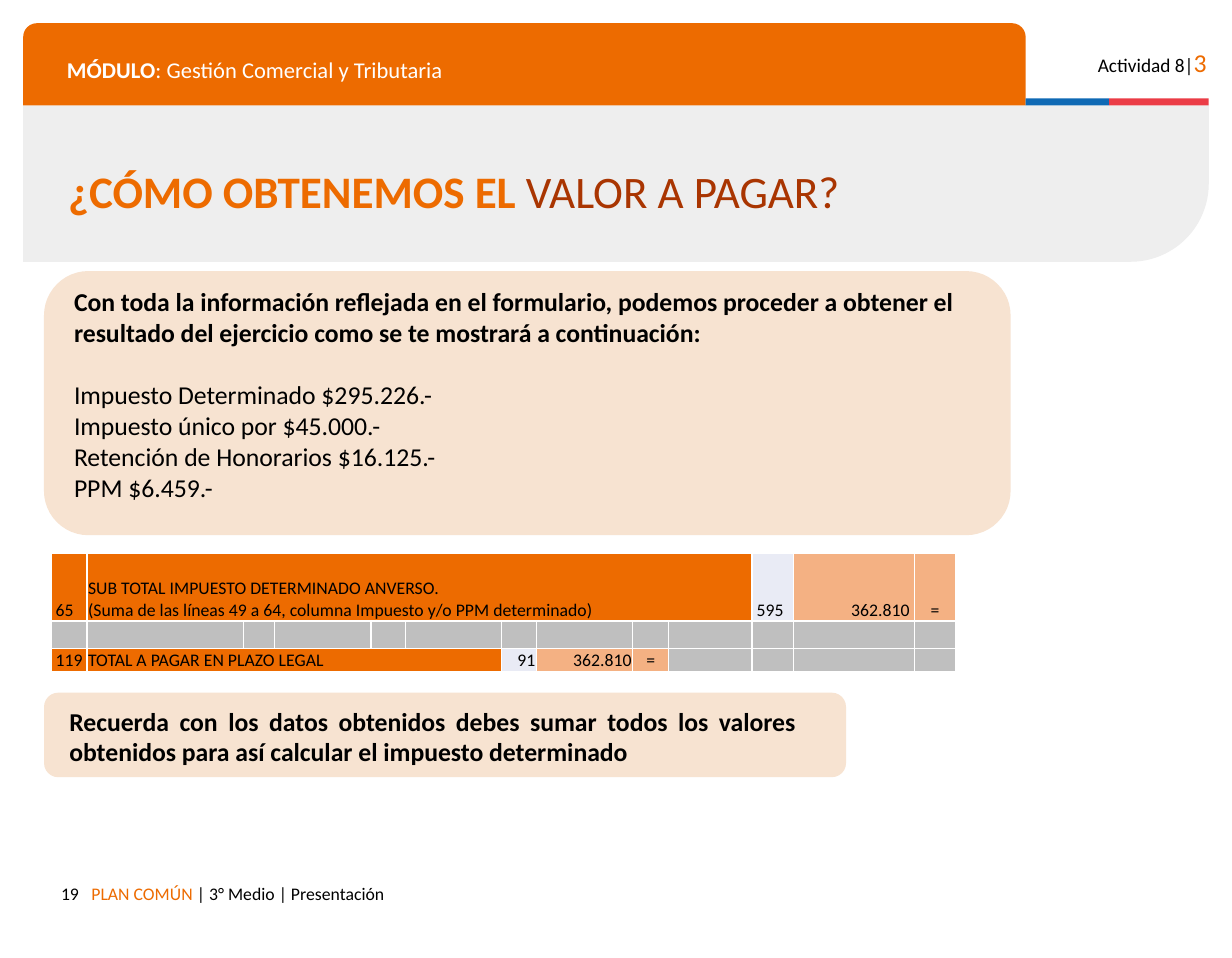
from dataclasses import dataclass

import lxml.etree
import pptx
import pptx.dml.color
import pptx.enum.shapes
import pptx.enum.text
import pptx.oxml.ns
import pptx.util

Inches = pptx.util.Inches
Pt = pptx.util.Pt
Shape = pptx.enum.shapes.MSO_SHAPE
Align = pptx.enum.text.PP_ALIGN
Anchor = pptx.enum.text.MSO_ANCHOR
qn = pptx.oxml.ns.qn


@dataclass(frozen=True)
class Theme:
    font: str = "Calibri"
    orange: str = "ED6B00"
    rust: str = "A93501"
    peach: str = "F7E3D1"
    salmon: str = "F4B183"
    lilac: str = "E9EBF5"
    pale: str = "EEEEEE"
    gray: str = "BFBFBF"
    blue: str = "0F69B4"
    red: str = "EB3C46"
    white: str = "FFFFFF"
    black: str = "000000"
    title: int = 28
    body: int = 16
    module: int = 14
    label: int = 12
    small: int = 11


THEME = Theme()


def rgb(color):
    return pptx.dml.color.RGBColor.from_string(color)


def add_span(para, text, size=THEME.body, color=THEME.black, bold=False):
    span = para.add_run()
    span.text = text
    span.font.name = THEME.font
    span.font.size = Pt(size)
    span.font.bold = bold
    span.font.color.rgb = rgb(color)


class SlideBuilder:
    def __init__(self, deck, theme):
        self.theme = theme
        self.page = deck.slides.add_slide(deck.slide_layouts[6])

    def shape(self, kind, at, color, adjustments=()):
        box = self.page.shapes.add_shape(kind, *map(Inches, at))
        box.shadow.inherit = False
        box.fill.solid()
        box.fill.fore_color.rgb = rgb(color)
        box.line.fill.background()
        for index, value in enumerate(adjustments):
            box.adjustments[index] = value
        return box

    def text(self, at, lines, align=Align.LEFT, anchor=Anchor.TOP, inset=0.1, spacing=None):
        frame = self.page.shapes.add_textbox(*map(Inches, at)).text_frame
        frame.word_wrap = True
        frame.vertical_anchor = anchor
        frame.margin_left = frame.margin_right = Inches(0.1)
        frame.margin_top = frame.margin_bottom = Inches(inset)
        for index, spans in enumerate(lines):
            para = frame.add_paragraph() if index else frame.paragraphs[0]
            para.alignment = align
            para.line_spacing = spacing
            for text, style in spans:
                add_span(para, text, **style)
        return frame

    def table(self, at, widths, heights):
        grid = self.page.shapes.add_table(len(heights), len(widths), *map(Inches, at)).table
        for column, width in zip(grid.columns, widths):
            column.width = Inches(width)
        for row, height in zip(grid.rows, heights):
            row.height = Inches(height)
        for row in range(len(heights)):
            for column in range(len(widths)):
                self.cell(grid, row, column, self.theme.gray)
        return grid

    def cell(self, grid, row, column, color, lines=(), align=Align.LEFT, left=0.01, right=0.01, span=1):
        cell = grid.cell(row, column)
        if span > 1:
            cell.merge(grid.cell(row, column + span - 1))
        cell.fill.solid()
        cell.fill.fore_color.rgb = rgb(color)
        cell.vertical_anchor = Anchor.BOTTOM
        cell.margin_left, cell.margin_right = Inches(left), Inches(right)
        cell.margin_top, cell.margin_bottom = Inches(0.01), 0
        frame = cell.text_frame
        for index, line in enumerate(lines):
            para = frame.add_paragraph() if index else frame.paragraphs[0]
            para.alignment = align
            add_span(para, line, self.theme.small)
        if not lines:
            end = lxml.etree.SubElement(frame.paragraphs[0]._p, qn("a:endParaRPr"))
            end.set("sz", str(self.theme.small * 100))
            self.borders(cell)

    def borders(self, cell):
        properties = cell._tc.get_or_add_tcPr()
        for index, side in enumerate("LRTB"):
            line = lxml.etree.Element(qn(f"a:ln{side}"), w=str(Pt(1)))
            fill = lxml.etree.SubElement(line, qn("a:solidFill"))
            lxml.etree.SubElement(fill, qn("a:srgbClr"), val=self.theme.white)
            properties.insert(index, line)


def add_header(builder):
    theme = builder.theme
    band = builder.shape(Shape.ROUND_1_RECTANGLE, (0.2, 0.91, 10.23, 1.35), theme.pale, [0.5])
    band.rotation = 180
    band._element.spPr.find(qn("a:xfrm")).set("flipH", "1")
    builder.shape(Shape.ROUND_2_SAME_RECTANGLE, (0.2, 0.2, 8.65, 0.71), theme.orange, [0.167, 0])
    builder.shape(Shape.RECTANGLE, (8.85, 0.85, 0.72, 0.06), theme.blue)
    builder.shape(Shape.RECTANGLE, (9.57, 0.85, 0.86, 0.06), theme.red)
    builder.text((9.23, 0.3, 1.28, 0.38), [[
        ("Actividad 8|", dict(size=theme.label)),
        ("3", dict(color=theme.orange)),
    ]], align=Align.RIGHT)
    module = dict(size=theme.module, color=theme.white)
    builder.text((0.48, 0.38, 8.14, 0.35), [[
        ("MÓDULO", dict(module, bold=True)),
        (": Gestión Comercial y Tributaria", module),
    ]])
    builder.text((0.49, 1.51, 9.79, 0.35), [[
        ("¿CÓMO OBTENEMOS EL ", dict(size=theme.title, color=theme.orange, bold=True)),
        ("VALOR A PAGAR?", dict(size=theme.title, color=theme.rust)),
    ]], anchor=Anchor.MIDDLE, spacing=0.8)


def add_footer(builder):
    theme = builder.theme
    builder.text((0.69, 7.53, 7.14, 0.38), [[
        ("PLAN COMÚN ", dict(size=theme.small, color=theme.orange)),
        ("| 3° Medio | Presentación", dict(size=theme.small)),
    ]])
    builder.text((0.2, 7.53, 0.58, 0.29), [[("19", dict(size=theme.small))]], align=Align.RIGHT)


def add_explanation(builder):
    theme = builder.theme
    builder.shape(Shape.ROUNDED_RECTANGLE, (0.38, 2.34, 8.34, 2.28), theme.peach, [0.168])
    intro = ("Con toda la información reflejada en el formulario, podemos proceder a obtener el "
             "resultado del ejercicio como se te mostrará a continuación:")
    amounts = ["Impuesto Determinado $295.226.-", "Impuesto único por $45.000.-",
               "Retención de Honorarios $16.125.-", "PPM $6.459.-"]
    lines = [[(intro, dict(bold=True))]] + [[(amount, {})] for amount in amounts]
    frame = builder.text((0.54, 2.42, 8.15, 1.99), lines, inset=0.05)
    frame.paragraphs[1].space_before = Pt(19.5)

    builder.shape(Shape.ROUNDED_RECTANGLE, (0.38, 5.98, 6.92, 0.73), theme.peach, [0.168])
    reminder = ("Recuerda con los datos obtenidos debes sumar todos los valores "
                "obtenidos para así calcular el impuesto determinado")
    builder.text((0.5, 6.04, 6.47, 0.64), [[(reminder, dict(bold=True))]],
                 align=Align.JUSTIFY, inset=0.05)


def add_tax_table(builder):
    theme = builder.theme
    widths = [0.31, 1.35, 0.27, 0.83, 0.3, 0.83, 0.3, 0.83, 0.31, 0.72, 0.36, 1.04, 0.36]
    grid = builder.table((0.44, 4.78, 7.81, 1.02), widths, [0.58, 0.24, 0.2])
    subtotal = ["SUB TOTAL IMPUESTO DETERMINADO ANVERSO.",
                "(Suma de las líneas 49 a 64, columna Impuesto y/o PPM determinado)"]
    entries = [
        (0, "65", subtotal, 9, "595", Align.LEFT, 0.04),
        (2, "119", ["TOTAL A PAGAR EN PLAZO LEGAL"], 5, "91", Align.RIGHT, 0.01),
    ]
    for row, number, label, span, code, code_align, pad in entries:
        after = 1 + span
        builder.cell(grid, row, 0, theme.orange, [number], left=0.04, right=0)
        builder.cell(grid, row, 1, theme.orange, label, span=span)
        builder.cell(grid, row, after, theme.lilac, [code], code_align, left=pad)
        builder.cell(grid, row, after + 1, theme.salmon, ["362.810"], Align.RIGHT, right=pad)
        builder.cell(grid, row, after + 2, theme.salmon, ["="], Align.CENTER)


def main():
    deck = pptx.Presentation()
    deck.slide_width, deck.slide_height = Inches(10.63), Inches(8.27)
    builder = SlideBuilder(deck, THEME)
    add_header(builder)
    add_footer(builder)
    add_explanation(builder)
    add_tax_table(builder)
    deck.save("out.pptx")


if __name__ == "__main__":
    main()
